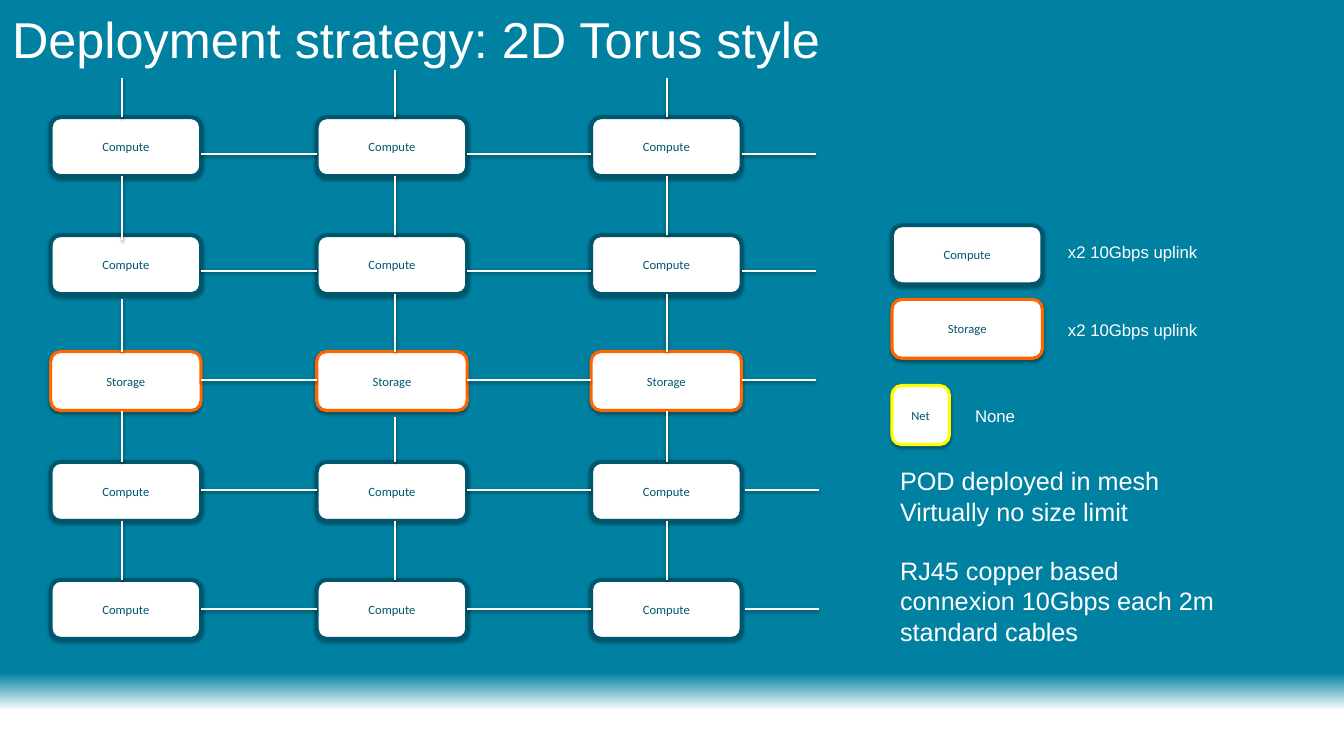
from lxml import etree
from pptx import Presentation
from pptx.dml.color import RGBColor
from pptx.enum.shapes import MSO_CONNECTOR, MSO_SHAPE
from pptx.enum.text import MSO_ANCHOR, MSO_AUTO_SIZE, PP_ALIGN
from pptx.oxml import parse_xml
from pptx.oxml.ns import nsdecls
from pptx.util import Inches, Pt

RECT, ROUND = MSO_SHAPE.RECTANGLE, MSO_SHAPE.ROUNDED_RECTANGLE
LINE = MSO_CONNECTOR.STRAIGHT
MID, GROW, NOFIT = MSO_ANCHOR.MIDDLE, MSO_AUTO_SIZE.SHAPE_TO_FIT_TEXT, MSO_AUTO_SIZE.NONE
LEFT, MIDDLE = PP_ALIGN.LEFT, PP_ALIGN.CENTER
WHITE = RGBColor(0xFF, 0xFF, 0xFF)
SEA = RGBColor(0x00, 0x81, 0xA1)
DEEP = RGBColor(0x00, 0x56, 0x6C)
ORANGE = RGBColor(0xFF, 0x66, 0x00)
YELLOW = RGBColor(0xFF, 0xFF, 0x00)


def write(para, text, size, name="Arial", color=WHITE, align=LEFT):
    para.alignment = align
    run = para.add_run()
    run.text = text
    for key, value in {"size": Pt(size), "name": name}.items():
        setattr(run.font, key, value)
    run.font.color.rgb = color


def shade(shape, alpha, dist):
    props = shape._element.spPr
    props.append(parse_xml(
        f'<a:effectLst {nsdecls("a")}><a:outerShdw blurRad="{Pt(3.1)}" '
        f'dist="{Pt(dist)}" dir="5400000" rotWithShape="0"><a:srgbClr val="000000">'
        f'<a:alpha val="{alpha * 1000}"/></a:srgbClr></a:outerShdw></a:effectLst>'))


deck = Presentation()
deck.slide_width, deck.slide_height = Inches(17.78), Inches(10)
slide = deck.slides.add_slide(deck.slide_layouts[5])
shapes = slide.shapes

# Backdrop fading to white at the foot
back = shapes.add_shape(RECT, 0, 0, deck.slide_width, deck.slide_height)
back.shadow.inherit = False
back.line.fill.background()
back.fill.gradient()
back.fill.gradient_angle = 270
for stop, (spot, color) in zip(back.fill.gradient_stops, [(0.89, SEA), (0.94, WHITE)]):
    stop.position = spot
    stop.color.rgb = color
shapes._spTree.insert(2, back._element)

# Title
title = shapes.title
for key, value in {"left": 0, "top": 0, "width": 12.69, "height": 1.02}.items():
    setattr(title, key, Inches(value))
frame = title.text_frame
for key, value in {"margin_left": Inches(0.16), "margin_right": Inches(0.16),
                   "margin_top": Inches(0.08), "margin_bottom": Inches(0.08),
                   "vertical_anchor": MID, "auto_size": NOFIT,
                   "word_wrap": True}.items():
    setattr(frame, key, value)
write(frame.paragraphs[0], "Deployment strategy: 2D Torus style", 48)

# Grid of nodes: left edges, top edges, and the axes the links run on
cols, rows = [0.67, 4.19, 7.82], [1.55, 3.11, 4.65, 6.11, 7.67]
wide, high = 1.99, 0.78
uprights, levels = [1.62, 5.23, 8.82], [2.04, 3.58, 5.03, 6.48, 8.06]
kinds = {"Compute": (DEEP, 3.75), "Storage": (ORANGE, 3), "Net": (YELLOW, 3)}

nodes = [(x, y, wide, "Storage" if row == 2 else "Compute")
         for row, y in enumerate(rows) for x in cols]
nodes += [(11.8, 2.98, wide, "Compute"), (11.8, 3.96, wide, "Storage"),
          (11.8, 5.1, 0.76, "Net")]
for x, y, w, kind in nodes:
    node = shapes.add_shape(ROUND, Inches(x), Inches(y), Inches(w), Inches(high))
    node.fill.solid()
    node.fill.fore_color.rgb = WHITE
    edge, weight = kinds[kind]
    node.line.color.rgb = edge
    node.line.width = Pt(weight)
    shade(node, 35, 1.8)
    node.text_frame.vertical_anchor = MID
    node.text_frame.word_wrap = True
    write(node.text_frame.paragraphs[0], kind, 12, "Calibri", DEEP, MIDDLE)

# Links down each column and along each row, open at the outer ends
ends = {(0, 1): (2.33, 3.18), (0, 2): (3.96, 4.65), (1, 0): (0.93, 1.55),
        (1, 3): (5.52, 6.11)}
links = []
for col, x in enumerate(uprights):
    for row, y in enumerate(rows):
        start = rows[row - 1] + high if row else 1.03
        top, foot = ends.get((col, row), (start, y))
        links.append((x, top, x, foot))
for row, y in enumerate(levels):
    shift = 0.04 if row > 2 else 0
    links += [(cols[1], y, cols[0] + wide, y), (cols[2], y, cols[1] + wide, y),
              (10.79 + shift, y, cols[2] + wide + shift, y)]
for link in links:
    wire = shapes.add_connector(LINE, *[Inches(v) for v in link])
    wire.line.color.rgb = WHITE
    wire.line.width = Pt(2)
    shade(wire, 38, 1.6)

# Legend labels and notes
notes = [(14.03, 3.15, 2.23, 0.37, 16, ["x2 10Gbps uplink"]),
         (14.03, 4.18, 2.23, 0.37, 16, ["x2 10Gbps uplink"]),
         (12.8, 5.32, 2.48, 0.37, 16, ["None"]),
         (11.81, 6.11, 4.46, 2.93, 24,
          ["POD deployed in mesh", "Virtually no size limit",
           "RJ45 copper based connexion 10Gbps each 2m standard cables"])]
for *area, size, lines in notes:
    frame = shapes.add_textbox(*[Inches(v) for v in area]).text_frame
    frame.word_wrap = True
    frame.auto_size = GROW
    for i, text in enumerate(lines):
        para = frame.add_paragraph() if i else frame.paragraphs[0]
        if i == 2:
            para.space_before = Pt(28)
        write(para, text, size)

deck.save("out.pptx")
